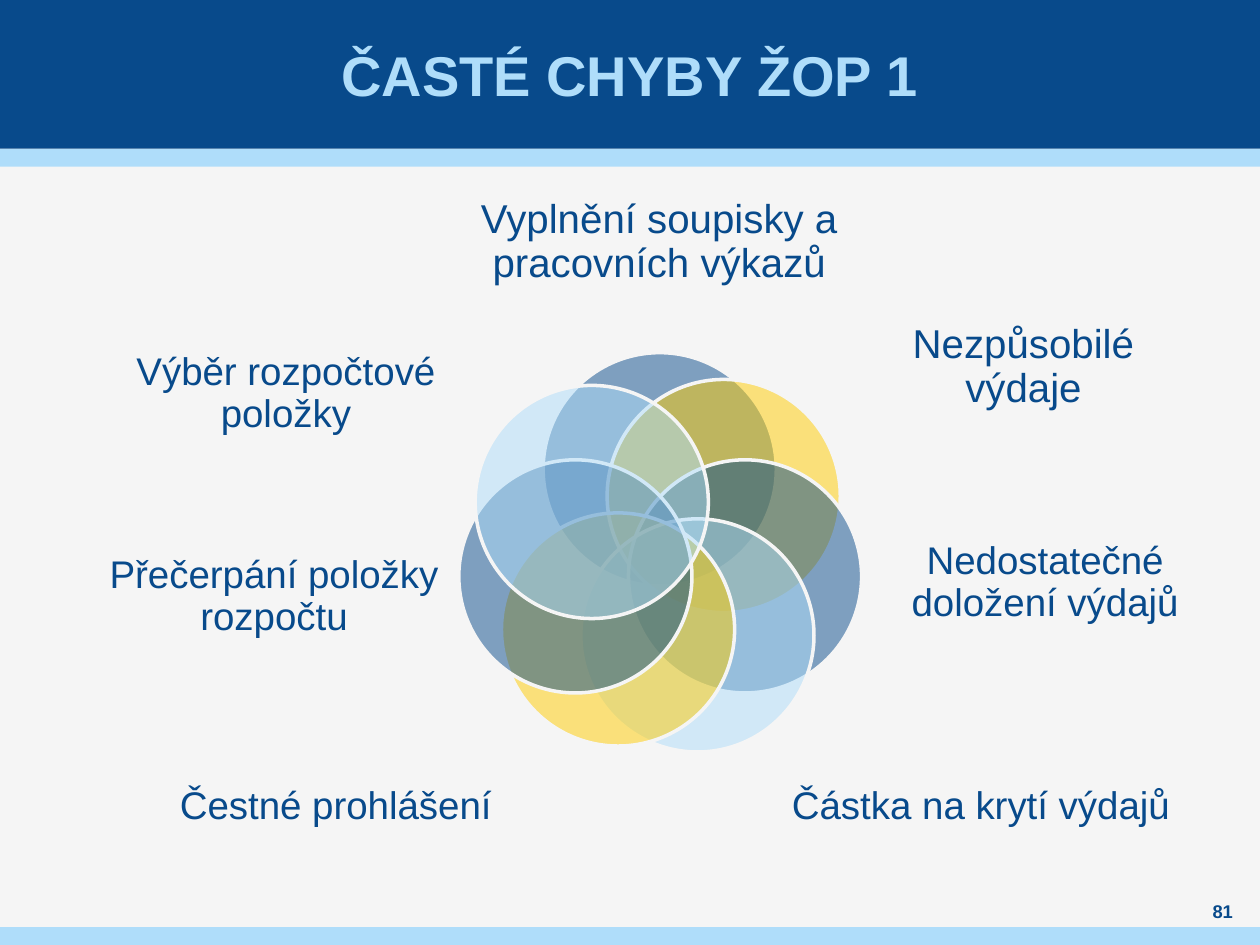
import pptx
import pptx.dml.color
import pptx.enum.shapes
import pptx.enum.text
import pptx.oxml.ns
import pptx.util
from lxml import etree
from pptx.util import Cm

NAVY = pptx.dml.color.RGBColor(0x08, 0x4A, 0x8B)
SKY = pptx.dml.color.RGBColor(0xAF, 0xDD, 0xFA)
YELLOW = pptx.dml.color.RGBColor(0xFF, 0xCC, 0x00)
PAPER = pptx.dml.color.RGBColor(0xF5, 0xF5, 0xF5)

WIDTH, HEIGHT = 25.4, 19.05
HEADER = 3.0
STRIPE = 0.36
DIAMETER = 4.7

# Clockwise from the top: circle corner, colour, label, label box, text size
PETALS = [
    ((10.95, 7.11), NAVY, "Vyplnění soupisky a pracovních výkazů",
     (8.1, 3.99, 10.39, 1.8), 23),
    ((12.24, 7.65), YELLOW, "Nezpůsobilé výdaje",
     (17.5, 5.54, 6.27, 3.73), 23),
    ((12.67, 9.27), NAVY, "Nedostatečné doložení výdajů",
     (18.24, 9.93, 5.66, 3.66), 22),
    ((11.71, 10.46), SKY, "Částka na krytí výdajů",
     (15.7, 14.73, 8.15, 3.1), 22),
    ((10.11, 10.34), YELLOW, "Čestné prohlášení",
     (2.49, 14.73, 8.56, 3.1), 22),
    ((9.25, 9.27), NAVY, "Přečerpání položky rozpočtu",
     (1.5, 10.13, 8.05, 3.81), 22),
    ((9.58, 7.77), SKY, "Výběr rozpočtové položky",
     (1.5, 6.35, 8.53, 3.18), 22),
]


def add_filled(page, kind, area, color):
    shape = page.shapes.add_shape(kind, *map(Cm, area))
    shape.shadow.inherit = False
    shape.fill.solid()
    shape.fill.fore_color.rgb = color
    return shape


def add_band(page, top, height, color):
    kind = pptx.enum.shapes.MSO_SHAPE.RECTANGLE
    band = add_filled(page, kind, (0, top, WIDTH, height), color)
    band.line.fill.background()


def add_circle(page, corner, color):
    """Add a half-transparent circle with a pale outline."""
    kind = pptx.enum.shapes.MSO_SHAPE.OVAL
    circle = add_filled(page, kind, (*corner, DIAMETER, DIAMETER), color)
    circle.line.color.rgb = PAPER
    circle.line.width = pptx.util.Pt(2)
    name = pptx.oxml.ns.qn
    tint = circle.fill._xPr.find(name("a:solidFill")).find(name("a:srgbClr"))
    etree.SubElement(tint, name("a:alpha"), val="50000")


def add_text(page, text, area, size, color=NAVY, bold=False, spacing=1.0):
    box = page.shapes.add_textbox(*map(Cm, area))
    frame = box.text_frame
    frame.word_wrap = True
    frame.vertical_anchor = pptx.enum.text.MSO_ANCHOR.MIDDLE
    frame.margin_left = frame.margin_right = 0
    frame.margin_top = frame.margin_bottom = 0
    para = frame.paragraphs[0]
    para.text = text
    para.alignment = pptx.enum.text.PP_ALIGN.CENTER
    para.line_spacing = spacing
    para.font.name = "Arial"
    para.font.size = pptx.util.Pt(size)
    para.font.bold = bold
    para.font.color.rgb = color


def main():
    deck = pptx.Presentation()
    deck.slide_width, deck.slide_height = Cm(WIDTH), Cm(HEIGHT)
    page = deck.slides.add_slide(deck.slide_layouts[6])
    page.background.fill.solid()
    page.background.fill.fore_color.rgb = PAPER

    add_band(page, HEADER, STRIPE, SKY)
    add_band(page, 0, HEADER, NAVY)
    add_band(page, HEIGHT - STRIPE, STRIPE, SKY)
    add_text(page, "ČASTÉ CHYBY ŽOP 1", (1, 0, 23.4, HEADER), 32, SKY, bold=True)
    add_text(page, "81", (24, 18.11, 1.3, 0.5), 10.5, bold=True)

    for corner, color, label, area, size in PETALS:
        add_circle(page, corner, color)
        add_text(page, label, area, size, spacing=0.9)

    deck.save("out.pptx")


if __name__ == "__main__":
    main()
